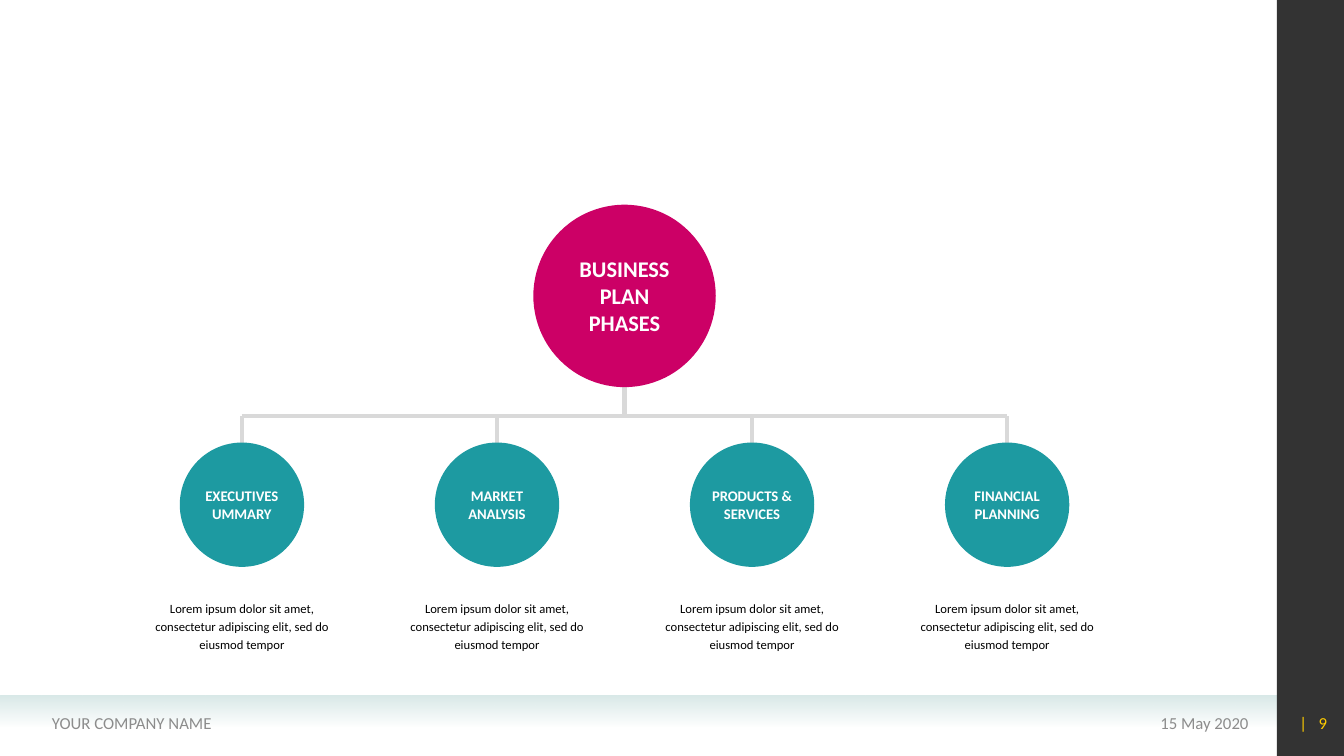
from lxml import etree
from pptx import Presentation
from pptx.dml.color import RGBColor
from pptx.enum.shapes import MSO_CONNECTOR, MSO_SHAPE
from pptx.enum.text import MSO_ANCHOR, MSO_AUTO_SIZE, PP_ALIGN
from pptx.oxml.ns import qn
from pptx.util import Pt

TEAL, MAGENTA, LINE_GREY = "1D9AA1", "CC0066", "D9D9D9"
BAND, FOOTER_GREY, YELLOW = "D9E9E8", "8C8C8C", "FFCC00"
WHITE, BLACK = "FFFFFF", "000000"

ROOT = "BUSINESS\nPLAN\nPHASES"
PHASES = ["EXECUTIVESUMMARY", "MARKET\nANALYSIS", "PRODUCTS & SERVICES", "FINANCIAL PLANNING"]
DESCRIPTION = "Lorem ipsum dolor sit amet, consectetur adipiscing elit, sed do eiusmod tempor"


def color(hex_string):
    return RGBColor.from_string(hex_string)


def set_alpha(color_element, percent):
    etree.SubElement(color_element, qn("a:alpha")).set("val", str(percent * 1000))


def add_solid(slide, preset, box, fill):
    solid = slide.shapes.add_shape(preset, *map(Pt, box))
    solid.shadow.inherit = False
    solid.fill.solid()
    solid.fill.fore_color.rgb = color(fill)
    solid.line.fill.background()
    return solid


def add_circle(slide, center_x, top, diameter, fill):
    add_solid(slide, MSO_SHAPE.OVAL, (center_x - diameter / 2, top, diameter, diameter), fill)


def add_line(slide, x1, y1, x2, y2):
    link = slide.shapes.add_connector(MSO_CONNECTOR.STRAIGHT, *map(Pt, (x1, y1, x2, y2)))
    link.line.color.rgb = color(LINE_GREY)
    link.line.width = Pt(3)
    etree.SubElement(link._element.spPr, qn("a:effectLst"))


def add_text(slide, box, text, size, ink, bold=False, align=PP_ALIGN.CENTER,
             anchor=MSO_ANCHOR.MIDDLE, wrap=True, grow=True, spacing=None):
    frame = slide.shapes.add_textbox(*map(Pt, box)).text_frame
    frame.text = text
    frame_format = {
        "word_wrap": wrap,
        "vertical_anchor": anchor,
        "auto_size": MSO_AUTO_SIZE.SHAPE_TO_FIT_TEXT if grow else MSO_AUTO_SIZE.NONE,
    }
    for name, value in frame_format.items():
        setattr(frame, name, value)
    for paragraph in frame.paragraphs:
        paragraph.alignment = align
        paragraph.line_spacing = spacing
        for run in paragraph.runs:
            for name, value in {"name": "Calibri", "size": Pt(size), "bold": bold}.items():
                setattr(run.font, name, value)
            run.font.color.rgb = color(ink)
    return frame


def draw_frame(slide, width, height):
    """Footer band, dark sidebar and footer texts."""
    sidebar_width = 48
    content_width = width - sidebar_width

    # Band fading downwards
    band = add_solid(slide, MSO_SHAPE.RECTANGLE, (0, height - 43.5, content_width, 22.5), BAND)
    band.fill.gradient()
    band.fill.gradient_angle = 270
    for stop, position in zip(band.fill.gradient_stops, (0, 1)):
        stop.color.rgb = color(BAND)
        stop.position = position
    set_alpha(list(band._element.spPr.iter(qn("a:srgbClr")))[-1], 0)

    # Translucent sidebar
    sidebar = add_solid(slide, MSO_SHAPE.RECTANGLE,
                        (content_width, 0, sidebar_width, height), BLACK)
    set_alpha(next(sidebar._element.spPr.iter(qn("a:srgbClr"))), 80)

    # Company, date and page number
    top = height - 38
    footers = [
        (30, 353, "YOUR COMPANY NAME", FOOTER_GREY, PP_ALIGN.LEFT),
        (655, 244, "15 May 2020", FOOTER_GREY, PP_ALIGN.RIGHT),
        (907, 48, "| 9", YELLOW, PP_ALIGN.RIGHT),
    ]
    for left, text_width, text, ink, align in footers:
        page = add_text(slide, (left, top, text_width, 28.75), text, 12, ink,
                        align=align, grow=False)
    # Widen the gap between the bar and the page number
    bar = page.paragraphs[0].runs[0]
    bar.text = "|"
    for part, gap in ((" ", 540), ("9", 0)):
        run = page.paragraphs[0].add_run()
        run.text = part
        run.font.name, run.font.size = "Calibri", Pt(12)
        run.font.color.rgb = color(YELLOW)
        run.font._element.set("spc", str(gap)) if gap else None


def draw_phase(slide, center, rail_y, top, label):
    """One phase: drop line, circle, label and description."""
    diameter = 88.8
    add_line(slide, center, rail_y, center, top)
    add_circle(slide, center, top, diameter, TEAL)
    add_text(slide, (center - 36, top + diameter / 2 - 16.7, 72, 33.4), label, 10.5, WHITE, bold=True)
    add_text(slide, (center - 73.5, top + 107.3, 147, 45.4), DESCRIPTION, 9, BLACK,
             anchor=MSO_ANCHOR.TOP, spacing=Pt(12.9))


def draw_tree(slide, left, top, pitch):
    """Root circle joined to the phases; left is the first phase's centre."""
    diameter = 130.3
    centers = [left + pitch * i for i in range(len(PHASES))]
    middle = (centers[0] + centers[-1]) / 2
    root_bottom = top + diameter
    rail_y = root_bottom + 20.9

    # Root
    add_line(slide, middle, root_bottom, middle, rail_y)
    add_circle(slide, middle, top, diameter, MAGENTA)
    add_text(slide, (middle - 45.4, top + diameter / 2 - 32.75, 90.8, 65.5), ROOT, 16, WHITE,
             bold=True, wrap=False)

    # Rail and phases
    add_line(slide, centers[0], rail_y, centers[-1], rail_y)
    for center, label in zip(centers, PHASES):
        draw_phase(slide, center, rail_y, rail_y + 18.7, label)


def main():
    deck = Presentation()
    deck.slide_width, deck.slide_height = Pt(960), Pt(540)
    slide = deck.slides.add_slide(deck.slide_layouts[6])
    draw_frame(slide, 960, 540)
    draw_tree(slide, left=172.8, top=146.2, pitch=182.2)
    deck.save("out.pptx")


if __name__ == "__main__":
    main()
